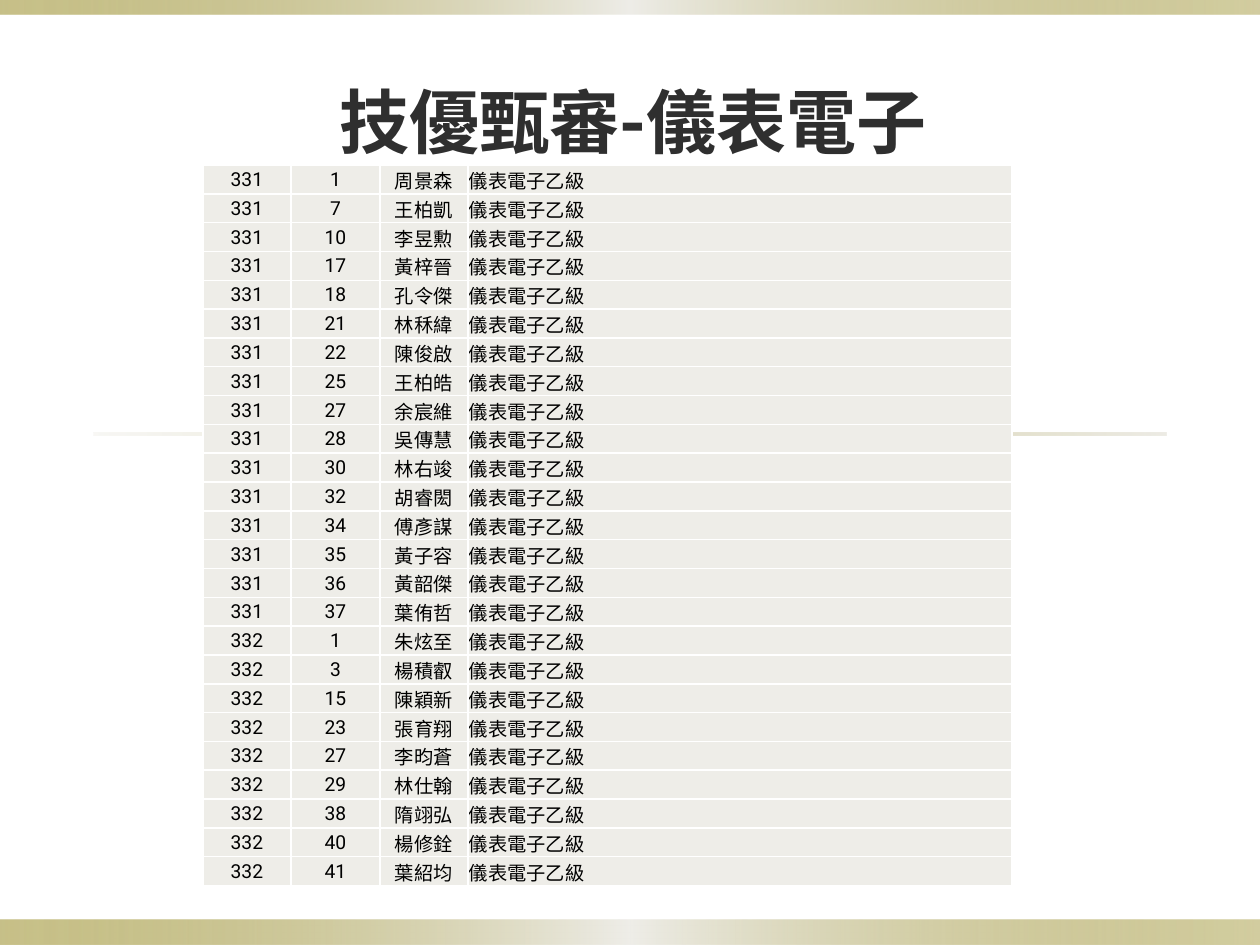
from dataclasses import dataclass

from lxml import etree
from pptx import Presentation
from pptx.dml.color import RGBColor
from pptx.enum.shapes import MSO_SHAPE
from pptx.enum.text import MSO_ANCHOR, PP_ALIGN
from pptx.oxml.ns import qn
from pptx.util import Pt

RECTANGLE = MSO_SHAPE.RECTANGLE
MIDDLE = MSO_ANCHOR.MIDDLE
CENTER = PP_ALIGN.CENTER
LEFT = PP_ALIGN.LEFT
EMU_PER_PX = 914400 / 126


@dataclass(frozen=True)
class Theme:
    font: str = "Roboto"
    title_size: int = 40
    body_size: int = 11
    border_width: int = 1
    title: str = "2F2F2F"
    body: str = "000000"
    olive: str = "918415"
    sand: str = "DCD9CC"
    pale: str = "EEEDE8"
    border: str = "FFFFFF"


def px(length):
    return round(length * EMU_PER_PX)


class SlideBuilder:
    def __init__(self, slide, theme):
        self.slide = slide
        self.theme = theme

    def style(self, paragraph, size, color, align, bold=False):
        paragraph.alignment = align
        for run in paragraph.runs:
            run.font.name = self.theme.font
            run.font.size = Pt(size)
            run.font.bold = bold
            run.font.color.rgb = RGBColor.from_string(color)

    def gradient_bar(self, left, top, width, height, stops):
        bar = self.slide.shapes.add_shape(
            RECTANGLE, px(left), px(top), px(width), px(height))
        bar.shadow.inherit = False
        bar.line.fill.background()
        bar.fill.gradient()
        bar.fill.gradient_angle = 0
        stop_list = bar.element.spPr.find(".//" + qn("a:gsLst"))
        for default_stop in list(stop_list):
            stop_list.remove(default_stop)
        for position, color, opacity in stops:
            stop = etree.SubElement(stop_list, qn("a:gs"), pos=str(position * 1000))
            shade = etree.SubElement(stop, qn("a:srgbClr"), val=color)
            etree.SubElement(shade, qn("a:alpha"), val=str(opacity * 1000))

    def title(self, text, left, top, width, height):
        heading = self.slide.shapes.add_textbox(
            px(left), px(top), px(width), px(height)).text_frame
        heading.word_wrap = True
        heading.vertical_anchor = MIDDLE
        heading.text = text
        self.style(heading.paragraphs[0], self.theme.title_size,
                   self.theme.title, CENTER, bold=True)

    def cell_borders(self, cell):
        properties = cell._tc.get_or_add_tcPr()
        for side in ("a:lnL", "a:lnR", "a:lnT", "a:lnB"):
            edge = etree.SubElement(properties, qn(side),
                                    w=str(Pt(self.theme.border_width)))
            fill = etree.SubElement(edge, qn("a:solidFill"))
            etree.SubElement(fill, qn("a:srgbClr"), val=self.theme.border)

    def table(self, rows, left, top, widths, height, aligns):
        grid = self.slide.shapes.add_table(
            len(rows), len(widths), px(left), px(top),
            px(sum(widths)), px(height)).table
        grid.first_row = False
        grid.horz_banding = False
        for column, width in zip(grid.columns, widths):
            column.width = px(width)
        for row, values in zip(grid.rows, rows):
            for cell, value, align in zip(row.cells, values, aligns):
                cell.margin_left = cell.margin_right = cell.margin_top = px(1)
                cell.margin_bottom = 0
                cell.vertical_anchor = MIDDLE
                self.cell_borders(cell)
                cell.fill.solid()
                cell.fill.fore_color.rgb = RGBColor.from_string(self.theme.pale)
                cell.text_frame.text = value
                self.style(cell.text_frame.paragraphs[0], self.theme.body_size,
                           self.theme.body, align)


STUDENTS = {
    "331": [
        (1, "周景森"), (7, "王柏凱"), (10, "李昱勲"), (17, "黃梓晉"),
        (18, "孔令傑"), (21, "林秝緯"), (22, "陳俊啟"), (25, "王柏皓"),
        (27, "余宸維"), (28, "吳傳慧"), (30, "林右竣"), (32, "胡睿閎"),
        (34, "傅彥謀"), (35, "黃子容"), (36, "黃韶傑"), (37, "葉侑哲"),
    ],
    "332": [
        (1, "朱炫至"), (3, "楊積叡"), (15, "陳穎新"), (23, "張育翔"),
        (27, "李昀蒼"), (29, "林仕翰"), (38, "隋翊弘"), (40, "楊修銓"),
        (41, "葉紹均"),
    ],
}
CERTIFICATE = "儀表電子乙級"


def main():
    deck = Presentation()
    deck.slide_width, deck.slide_height = px(1260), px(945)
    theme = Theme()
    builder = SlideBuilder(deck.slides.add_slide(deck.slide_layouts[6]), theme)

    band = [(0, theme.olive, 50), (50, theme.pale, 100), (100, theme.olive, 40)]
    rule = [(0, theme.sand, 20), (50, theme.olive, 40), (100, theme.sand, 50)]
    builder.gradient_bar(0, 920, 1260, 25, band)
    builder.gradient_bar(0, 0, 1260, 15, band)
    builder.gradient_bar(94, 433, 1072, 3, rule)

    builder.title("技優甄審-儀表電子", 25, 66, 1216, 110)
    roster = [(group, str(seat), name, CERTIFICATE)
              for group, members in STUDENTS.items()
              for seat, name in members]
    builder.table(roster, 203, 165, [88, 89, 88, 544], 721,
                  [CENTER, CENTER, CENTER, LEFT])
    deck.save("out.pptx")


if __name__ == "__main__":
    main()
